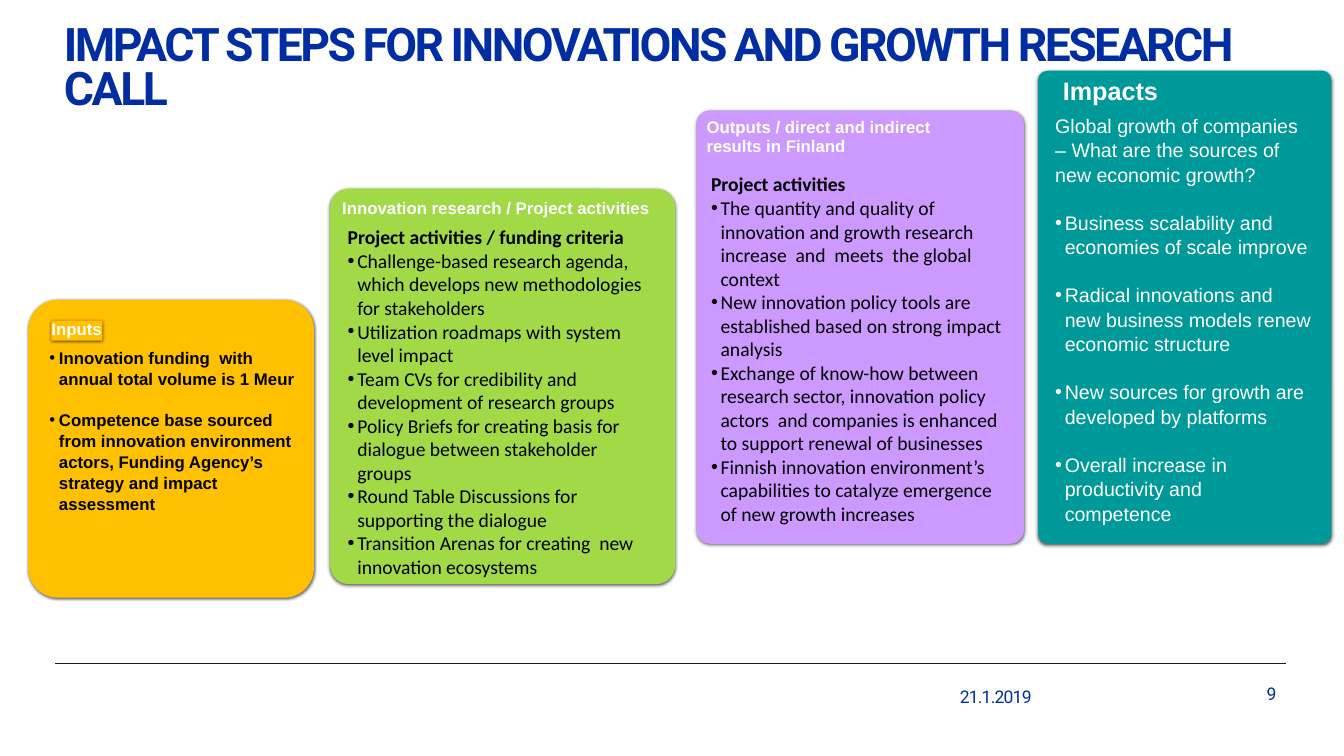
"""Build the slide of four impact steps for the innovations and growth research call."""
from dataclasses import dataclass
from typing import Optional

from lxml.etree import SubElement
from pptx import Presentation
from pptx.dml.color import RGBColor
from pptx.enum.shapes import MSO_CONNECTOR, MSO_SHAPE
from pptx.enum.text import MSO_ANCHOR, MSO_AUTO_SIZE, PP_ALIGN
from pptx.oxml.ns import qn
from pptx.util import Inches, Pt

NAVY = RGBColor(0x00, 0x2E, 0xA2)
RULE = RGBColor(0x19, 0x19, 0x19)
BLACK = RGBColor(0x00, 0x00, 0x00)
WHITE = RGBColor(0xFF, 0xFF, 0xFF)
TEAL = RGBColor(0x00, 0x99, 0x99)
VIOLET = RGBColor(0xCC, 0x99, 0xFF)
GREEN = RGBColor(0xA1, 0xD9, 0x47)
AMBER = RGBColor(0xFF, 0xC0, 0x00)
INDENT = Inches(0.19)


@dataclass
class Box:
    left: float
    top: float
    width: float
    height: float

    def place(self, shape) -> None:
        shape.left, shape.top = Inches(self.left), Inches(self.top)
        shape.width, shape.height = Inches(self.width), Inches(self.height)

    def lengths(self) -> list:
        return [Inches(v) for v in (self.left, self.top, self.width, self.height)]


@dataclass
class Step:
    panel: Box
    fill: RGBColor
    rounding: float
    heading: str
    heading_box: Box
    list_box: Box
    bullets: list[str]
    intro: str = ""
    intro_bold: bool = True
    bullets_bold: bool = False
    font: str = "Calibri"
    size: int = 28
    color: RGBColor = BLACK
    gap: float = 0
    line_spacing: float = 1.0
    heading_size: int = 24
    heading_align: PP_ALIGN = PP_ALIGN.LEFT
    heading_wraps: bool = True
    heading_fill: Optional[RGBColor] = None
    heading_shadow: bool = True


STEPS = [
    Step(Box(20.6, 1.4, 5.82, 9.39), TEAL, 0.034, "Impacts",
         Box(20.73, 1.56, 2.61, 0.51), Box(20.84, 2.19, 5.29, 8.11),
         ["Business scalability and economies of scale improve",
          "Radical innovations and new business models renew economic structure",
          "New sources for growth are developed by platforms",
          "Overall increase in productivity and competence"],
         intro="Global growth of companies – What are the sources of new economic growth?",
         intro_bold=False, font="Arial", color=WHITE, gap=33.6, line_spacing=1.04,
         heading_size=36, heading_align=PP_ALIGN.CENTER, heading_shadow=False),
    Step(Box(13.82, 2.19, 6.5, 8.6), VIOLET, 0.042,
         "Outputs / direct and indirect results in Finland",
         Box(14.02, 2.37, 5.29, 0.6), Box(14.01, 3.37, 6.03, 7.57),
         ["The quantity and quality of innovation and growth research increase  and  meets  the global context",
          "New innovation policy tools are established based on strong impact analysis",
          "Exchange of know-how between research sector, innovation policy actors  and companies "
          "is enhanced to support renewal of businesses",
          "Finnish innovation environment’s capabilities to catalyze emergence of new growth increases"],
         intro="Project activities"),
    Step(Box(6.55, 3.74, 6.85, 7.85), GREEN, 0.055,
         "Innovation research / Project activities",
         Box(6.79, 3.97, 7.09, 0.33), Box(6.8, 4.42, 6.26, 7.17),
         ["Challenge-based research agenda, which develops new methodologies for stakeholders",
          "Utilization roadmaps with system level impact",
          "Team CVs for credibility and development of research groups",
          "Policy Briefs for creating basis for dialogue between stakeholder groups",
          "Round Table Discussions for supporting the dialogue",
          "Transition Arenas for creating  new  innovation ecosystems"],
         intro="Project activities / funding criteria", heading_wraps=False),
    Step(Box(0.56, 5.95, 5.67, 5.91), AMBER, 0.104, "Inputs",
         Box(1.02, 6.36, 1.01, 0.4), Box(0.88, 6.84, 5.19, 3.33),
         ["Innovation funding  with annual total volume is 1 Meur",
          "Competence base sourced from innovation environment actors, "
          "Funding Agency’s strategy and impact assessment"],
         bullets_bold=True, font="Arial", size=24, gap=28.8, line_spacing=1.04,
         heading_wraps=False, heading_fill=AMBER),
]


def shadow_effect(parent):
    effects = SubElement(parent, qn("a:effectLst"))
    shadow = SubElement(effects, qn("a:outerShdw"), blurRad=str(Pt(4.5)),
                        dist=str(Pt(1.5)), dir="5400000", algn="ctr", rotWithShape="0")
    color = SubElement(shadow, qn("a:srgbClr"), val="000000")
    SubElement(color, qn("a:alpha"), val="63000")
    return effects


def format_runs(paragraph, font: str, size: float, color: RGBColor, bold: bool = False,
                tracking: float = 0) -> None:
    for run in paragraph.runs:
        run.font.name, run.font.size, run.font.bold = font, Pt(size), bold
        run.font.color.rgb = color
        if tracking:
            run.font._element.set("spc", str(round(tracking * 100)))


def set_insets(frame, inset: float) -> None:
    frame.margin_left = frame.margin_right = Inches(inset)
    frame.margin_top = frame.margin_bottom = Inches(inset)


def add_panel(slide, box: Box, fill: RGBColor, kind: MSO_SHAPE):
    panel = slide.shapes.add_shape(kind, *box.lengths())
    panel.fill.solid()
    panel.fill.fore_color.rgb = fill
    panel.line.fill.background()
    shadow_effect(panel._element.spPr)
    return panel


def add_heading(slide, step: Step) -> None:
    if step.heading_fill is not None:
        heading = add_panel(slide, step.heading_box, step.heading_fill, MSO_SHAPE.RECTANGLE)
    else:
        heading = slide.shapes.add_textbox(*step.heading_box.lengths())
    frame = heading.text_frame
    set_insets(frame, 0)
    frame.vertical_anchor = MSO_ANCHOR.TOP
    frame.word_wrap = step.heading_wraps
    frame.text = step.heading
    paragraph = frame.paragraphs[0]
    paragraph.alignment, paragraph.line_spacing = step.heading_align, 0.9
    format_runs(paragraph, "Arial", step.heading_size, WHITE, True)
    if step.heading_shadow:
        properties = paragraph.runs[0].font._element
        properties.find(qn("a:solidFill")).addnext(shadow_effect(properties))


def fill_list(placeholder, step: Step) -> None:
    step.list_box.place(placeholder)
    placeholder.element.getparent().append(placeholder.element)
    frame = placeholder.text_frame
    entries = ([step.intro] if step.intro else []) + step.bullets
    frame.text = "\n".join(entries)
    frame.word_wrap, frame.auto_size = True, MSO_AUTO_SIZE.NONE
    frame.vertical_anchor = MSO_ANCHOR.TOP
    for position, paragraph in enumerate(frame.paragraphs):
        is_intro = bool(step.intro) and position == 0
        paragraph.alignment, paragraph.line_spacing = PP_ALIGN.LEFT, step.line_spacing
        paragraph.space_before = Pt(step.gap if position else 0)
        properties = paragraph._p.get_or_add_pPr()
        properties.set("marL", str(0 if is_intro else INDENT))
        properties.set("indent", str(0 if is_intro else -INDENT))
        if is_intro:
            SubElement(properties, qn("a:buNone"))
        else:
            SubElement(properties, qn("a:buFont"), typeface="Arial")
            SubElement(properties, qn("a:buChar"), char="•")
        bold = step.intro_bold if is_intro else step.bullets_bold
        format_runs(paragraph, step.font, step.size, step.color, bold)


def add_step(slide, step: Step, placeholder) -> None:
    panel = add_panel(slide, step.panel, step.fill, MSO_SHAPE.ROUNDED_RECTANGLE)
    panel.adjustments[0] = step.rounding
    add_heading(slide, step)
    fill_list(placeholder, step)


def fill_title(title, text: str) -> None:
    Box(1.21, 0.45, 23.5, 1.34).place(title)
    frame = title.text_frame
    set_insets(frame, 0.06)
    frame.word_wrap, frame.auto_size = True, MSO_AUTO_SIZE.NONE
    frame.vertical_anchor = MSO_ANCHOR.TOP
    frame.text = text
    paragraph = frame.paragraphs[0]
    paragraph.alignment, paragraph.line_spacing = PP_ALIGN.LEFT, 0.8
    format_runs(paragraph, "Roboto", 66, NAVY, True, -3.6)


def add_footer_text(slide, box: Box, text: str, inset: float, tracking: float = 0) -> None:
    frame = slide.shapes.add_textbox(*box.lengths()).text_frame
    set_insets(frame, inset)
    frame.word_wrap, frame.vertical_anchor = True, MSO_ANCHOR.BOTTOM
    frame.text = text
    frame.paragraphs[0].alignment = PP_ALIGN.RIGHT
    format_runs(frame.paragraphs[0], "Roboto", 25, NAVY, tracking=tracking)


def add_footer(slide) -> None:
    rule = slide.shapes.add_connector(MSO_CONNECTOR.STRAIGHT, Inches(1.1), Inches(13.16),
                                      Inches(25.52), Inches(13.16))
    rule.line.color.rgb, rule.line.width = RULE, Pt(2)
    SubElement(rule._element.spPr, qn("a:effectLst"))
    add_footer_text(slide, Box(17.62, 13.61, 2.85, 0.42), "21.1.2019", 0, -1.1)
    add_footer_text(slide, Box(24.77, 13.55, 0.66, 0.52), "9", 0.1)


def main() -> None:
    deck = Presentation()
    deck.slide_width, deck.slide_height = Inches(26.67), Inches(15)
    slide = deck.slides.add_slide(deck.slide_layouts.get_by_name("Comparison"))
    title, *lists = slide.placeholders
    fill_title(title, "IMPACT STEPS FOR INNOVATIONS AND GROWTH RESEARCH CALL")
    add_footer(slide)
    for step, placeholder in zip(STEPS, lists):
        add_step(slide, step, placeholder)
    deck.save("out.pptx")


if __name__ == "__main__":
    main()
